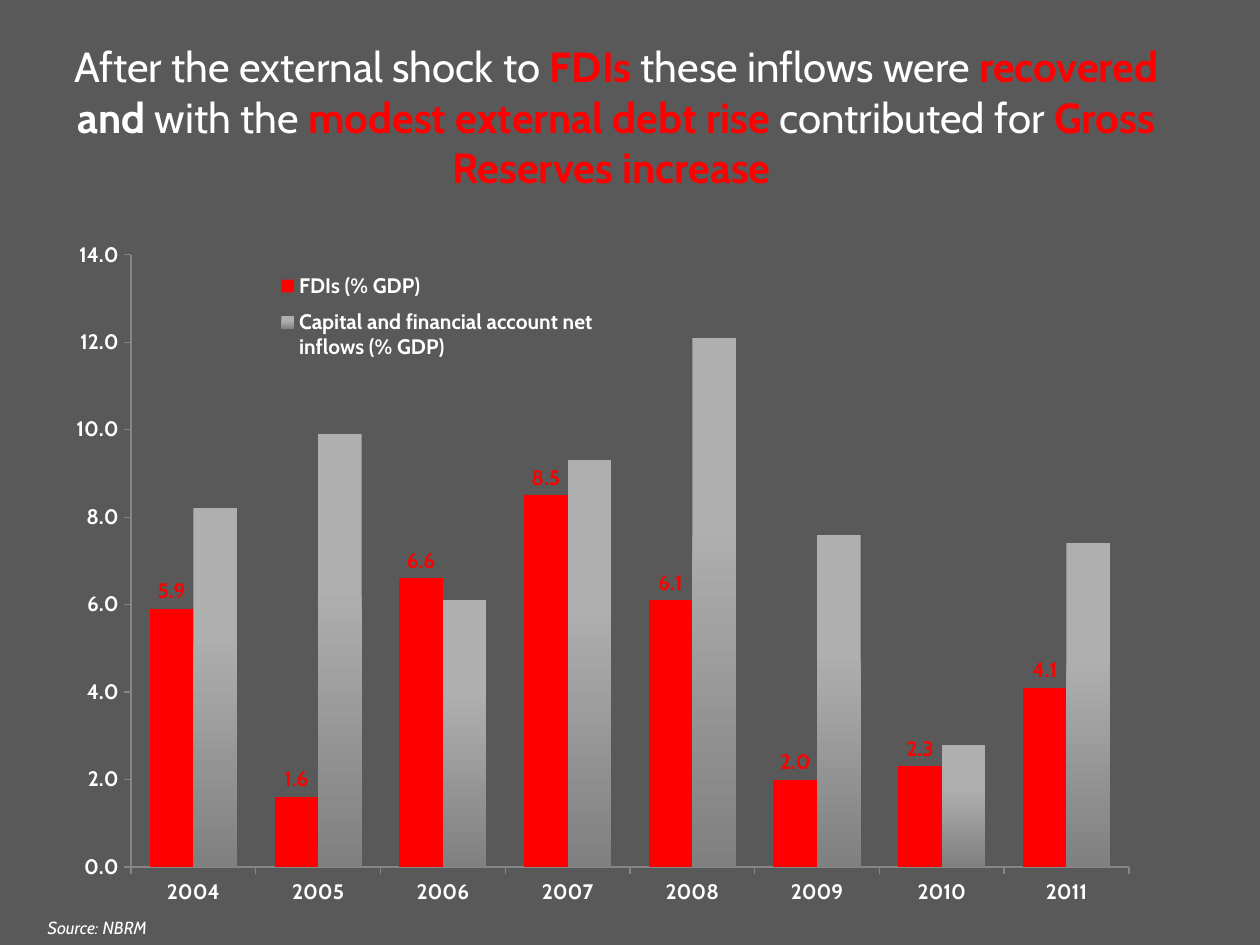
from lxml import etree
from pptx import Presentation
from pptx import util as u
from pptx.chart.data import CategoryChartData
from pptx.dml.color import RGBColor
from pptx.enum import chart as ch, text
from pptx.oxml import ns

WHITE = RGBColor(0xFF, 0xFF, 0xFF)
RED = RGBColor(0xFF, 0x00, 0x00)
BACKGROUND = RGBColor(0x59, 0x59, 0x59)
AXIS_GREY = RGBColor(0x86, 0x86, 0x86)
LIGHT_GREY = RGBColor(0xAF, 0xAF, 0xAF)
DARK_GREY = RGBColor(0x80, 0x80, 0x80)

YEARS = [str(year) for year in range(2004, 2012)]
FDI = [5.9, 1.6, 6.6, 8.5, 6.1, 2.0, 2.3, 4.1]
NET_INFLOWS = [8.2, 9.9, 6.1, 9.3, 12.1, 7.6, 2.8, 7.4]

# Headline runs: wording, colour, bold
HEADLINE = [
    ("After the external shock to ", WHITE, False),
    ("FDIs", RED, True),
    (" these inflows were ", WHITE, False),
    ("recovered ", RED, True),
    ("and ", WHITE, True),
    ("with the ", WHITE, False),
    ("modest external debt rise ", RED, True),
    ("contributed for ", WHITE, False),
    ("Gross Reserves increase ", RED, True),
]


def apply(target, values):
    for name, value in values.items():
        setattr(target, name, value)


def place(parent, index, fractions, inner=False):
    """Give a chart part a fixed place, as fractions of the chart."""
    for old in parent.findall(ns.qn("c:layout")):
        parent.remove(old)
    layout = etree.Element(ns.qn("c:layout"))
    manual = etree.SubElement(layout, ns.qn("c:manualLayout"))
    settings = [("layoutTarget", "inner")] if inner else []
    settings += [("xMode", "edge"), ("yMode", "edge")]
    settings += zip("xywh", map(str, fractions))
    for tag, value in settings:
        etree.SubElement(manual, ns.qn("c:" + tag)).set("val", value)
    parent.insert(index, layout)


class SlideBuilder:
    font = "Cabin"

    def __init__(self, slide):
        self.slide = slide
        fill = slide.background.fill
        fill.solid()
        fill.fore_color.rgb = BACKGROUND

    def style(self, font, color=WHITE, **values):
        apply(font, {"name": self.font, **values})
        font.color.rgb = color

    def text(self, box, runs, size, align, anchor, italic=False):
        frame = self.slide.shapes.add_textbox(*map(u.Inches, box)).text_frame
        apply(frame, {"word_wrap": True, "vertical_anchor": anchor})
        paragraph = frame.paragraphs[0]
        paragraph.alignment = align
        for wording, color, bold in runs:
            run = paragraph.add_run()
            run.text = wording
            self.style(run.font, color, size=u.Pt(size), bold=bold, italic=italic)

    def axis(self, axis, **values):
        apply(axis, {"has_major_gridlines": False,
                     "major_tick_mark": ch.XL_TICK_MARK.OUTSIDE,
                     "minor_tick_mark": ch.XL_TICK_MARK.NONE, **values})
        axis.format.line.color.rgb = AXIS_GREY
        axis.format.line.width = u.Pt(0.75)

    def column_chart(self, box, categories, series, plot_area, legend_area):
        data = CategoryChartData(number_format="0.0")
        data.categories = categories
        for name, values in series:
            data.add_series(name, values)
        chart = self.slide.shapes.add_chart(
            ch.XL_CHART_TYPE.COLUMN_CLUSTERED, *map(u.Inches, box), data).chart
        apply(chart, {"has_title": False, "has_legend": True})
        self.style(chart.font, size=u.Pt(12), bold=True)
        apply(chart.plots[0], {"gap_width": 86, "overlap": 0,
                               "vary_by_categories": False})
        apply(chart.legend, {"position": ch.XL_LEGEND_POSITION.RIGHT,
                             "include_in_layout": True})
        place(chart.legend._element, 1, legend_area)
        place(chart._chartSpace.chart.plotArea, 0, plot_area, inner=True)
        self.axis(chart.category_axis)
        self.axis(chart.value_axis, minimum_scale=0, maximum_scale=14, major_unit=2)
        apply(chart.value_axis.tick_labels,
              {"number_format": "0.0", "number_format_is_linked": False})
        return chart

    def solid_series(self, series, color):
        fill = series.format.fill
        fill.solid()
        fill.fore_color.rgb = color
        labels = series.data_labels
        apply(labels, {"show_value": True, "number_format": "0.0",
                       "number_format_is_linked": False,
                       "position": ch.XL_LABEL_POSITION.OUTSIDE_END})
        self.style(labels.font, color, size=u.Pt(12), bold=True)

    def gradient_series(self, series, stops):
        fill = series.format.fill
        fill.gradient()
        fill.gradient_angle = 270
        for stop, (position, color) in zip(fill.gradient_stops, stops):
            stop.position = position
            stop.color.rgb = color


def main():
    deck = Presentation()
    apply(deck, {"slide_width": u.Inches(10), "slide_height": u.Inches(7.5)})
    builder = SlideBuilder(deck.slides.add_slide(deck.slide_layouts[6]))

    # Headline
    builder.text((0.28, 0.3, 9.22, 1.25), HEADLINE, 24,
                 text.PP_ALIGN.CENTER, text.MSO_ANCHOR.MIDDLE)

    # Inflows by year
    inflows = builder.column_chart(
        (0.5, 1.75, 9, 5.46), YEARS,
        [("FDIs (% GDP)", FDI),
         ("Capital and financial account net inflows (% GDP)", NET_INFLOWS)],
        plot_area=(0.06, 0.05, 0.88, 0.89), legend_area=(0.18, 0.06, 0.3, 0.16))
    fdi, net_inflows = inflows.plots[0].series
    builder.solid_series(fdi, RED)
    builder.gradient_series(net_inflows, [(0.35, LIGHT_GREY), (1, DARK_GREY)])

    # Source note
    builder.text((0.28, 7.23, 5.51, 0.27), [("Source: NBRM", WHITE, False)], 10,
                 text.PP_ALIGN.LEFT, text.MSO_ANCHOR.TOP, italic=True)

    deck.save("out.pptx")


if __name__ == "__main__":
    main()
